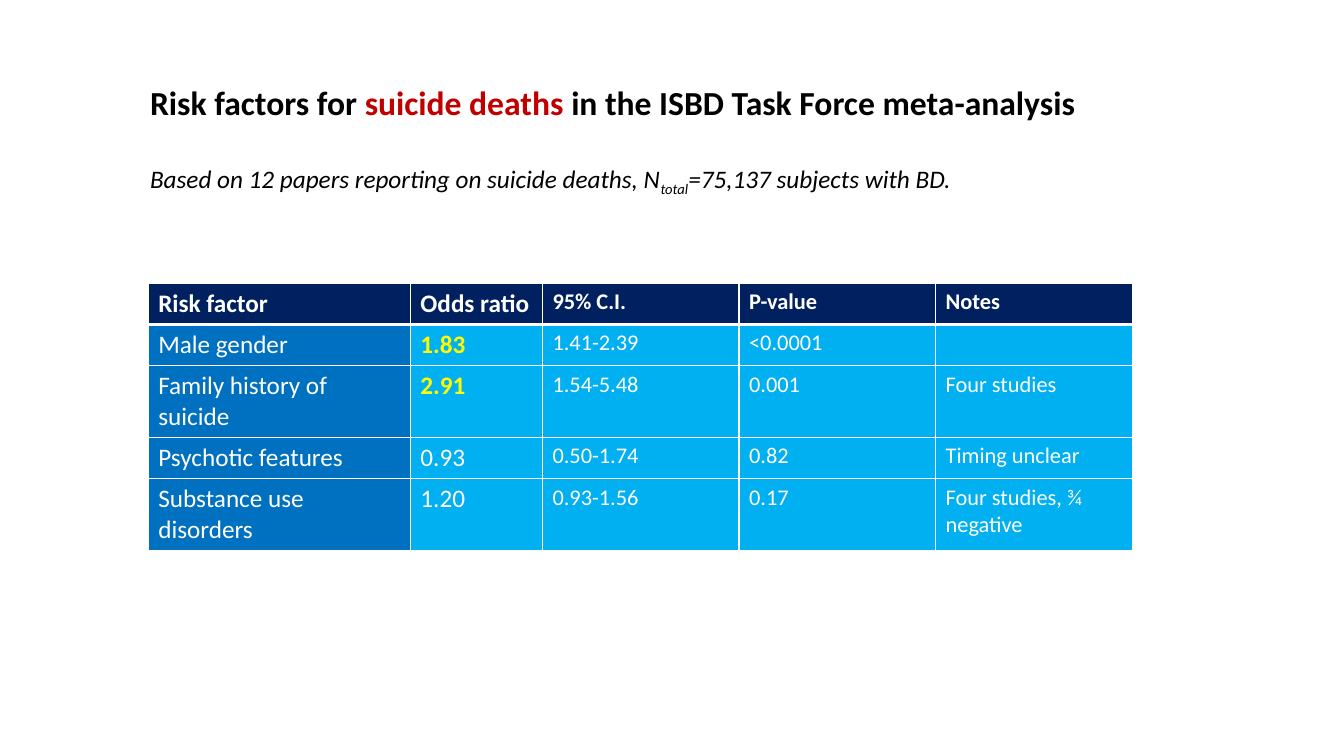
from dataclasses import dataclass

from lxml.etree import SubElement
from pptx import Presentation
from pptx.dml.color import RGBColor
from pptx.oxml.ns import qn
from pptx.util import Inches, Pt


@dataclass(frozen=True)
class Theme:
    """Colours, font and type sizes of the slide."""
    font: str = "Calibri"
    black: str = "000000"
    white: str = "FFFFFF"
    red: str = "C00000"
    yellow: str = "FFFF00"
    navy: str = "002060"
    blue: str = "0070C0"
    sky: str = "00B0F0"
    title: int = 24
    body: int = 18
    detail: int = 16
    border: int = 1
    header_border: int = 3


def add_text(paragraph, text, *, font, size, color, bold=False, italic=False, baseline=0):
    """Append a formatted run to a paragraph."""
    run = paragraph.add_run()
    run.text = text
    run.font.name = font
    run.font.size = Pt(size)
    run.font.bold = bold
    run.font.italic = italic
    run.font.color.rgb = RGBColor.from_string(color)
    if baseline:
        run.font._element.set("baseline", str(baseline * 1000))


class SlideBuilder:
    """Holds the theme and the current slide."""

    def __init__(self, slide, theme):
        """Keep the slide and its theme."""
        self.slide = slide
        self.theme = theme

    def heading(self, left, top, width, height, title, subtitle, gap):
        """Add a title and a subtitle, each a list of text and format pairs."""
        theme = self.theme
        box = self.slide.shapes.add_textbox(*map(Inches, (left, top, width, height)))
        box.text_frame.word_wrap = True
        title_paragraph = box.text_frame.paragraphs[0]
        subtitle_paragraph = box.text_frame.add_paragraph()
        subtitle_paragraph.space_before = Pt(gap)
        for text, color in title:
            add_text(title_paragraph, text, font=theme.font, size=theme.title,
                     color=color, bold=True)
        for text, baseline in subtitle:
            add_text(subtitle_paragraph, text, font=theme.font, size=theme.body,
                     color=theme.black, italic=True, baseline=baseline)

    def table(self, left, top, widths, row_height, rows, highlights):
        """Add a table with a header row and a coloured first column."""
        theme = self.theme
        frame = self.slide.shapes.add_table(
            len(rows), len(widths), Inches(left), Inches(top),
            Inches(sum(widths)), Inches(row_height * len(rows)))
        table = frame.table
        for column, width in zip(table.columns, widths):
            column.width = Inches(width)
        for row_index, values in enumerate(rows):
            table.rows[row_index].height = Inches(row_height)
            for column_index, text in enumerate(values):
                cell = table.cell(row_index, column_index)
                is_header = row_index == 0
                is_highlight = text in highlights
                first_column_fill = theme.blue if column_index == 0 else theme.sky
                self.borders(cell, row_index)
                cell.fill.solid()
                cell.fill.fore_color.rgb = RGBColor.from_string(
                    theme.navy if is_header else first_column_fill)
                if text:
                    add_text(cell.text_frame.paragraphs[0], text, font=theme.font,
                             size=theme.body if column_index < 2 else theme.detail,
                             color=theme.yellow if is_highlight else theme.white,
                             bold=is_header or is_highlight)

    def borders(self, cell, row_index):
        """Draw the cell borders, heavier below the header."""
        theme = self.theme
        properties = cell._tc.get_or_add_tcPr()
        heavy_side = {0: "lnB", 1: "lnT"}.get(row_index)
        for side in ("lnL", "lnR", "lnT", "lnB"):
            width = theme.header_border if side == heavy_side else theme.border
            line = SubElement(properties, qn(f"a:{side}"), w=str(Pt(width)))
            fill = SubElement(line, qn("a:solidFill"))
            SubElement(fill, qn("a:srgbClr"), val=theme.white)


def main():
    """Build and save the slide."""
    presentation = Presentation()
    presentation.slide_width = Inches(13.33)
    presentation.slide_height = Inches(7.5)
    theme = Theme()
    builder = SlideBuilder(
        presentation.slides.add_slide(presentation.slide_layouts[6]), theme)
    builder.table(
        1.47, 2.81, (2.6, 1.31, 1.95, 1.95, 1.95), 0.41,
        (
            ("Risk factor", "Odds ratio", "95% C.I.", "P-value", "Notes"),
            ("Male gender", "1.83", "1.41-2.39", "<0.0001", ""),
            ("Family history of suicide", "2.91", "1.54-5.48", "0.001", "Four studies"),
            ("Psychotic features", "0.93", "0.50-1.74", "0.82", "Timing unclear"),
            ("Substance use disorders", "1.20", "0.93-1.56", "0.17",
             "Four studies, ¾ negative"),
        ),
        highlights=("1.83", "2.91"))
    builder.heading(
        1.39, 0.76, 10.47, 1.21,
        title=(("Risk factors for ", theme.black), ("suicide deaths ", theme.red),
               ("in the ISBD Task Force meta-analysis", theme.black)),
        subtitle=(("Based on 12 papers reporting on suicide deaths, N", 0),
                  ("total", -25), ("=75,137 subjects with BD.", 0)),
        gap=29.3)
    presentation.save("out.pptx")


if __name__ == "__main__":
    main()
